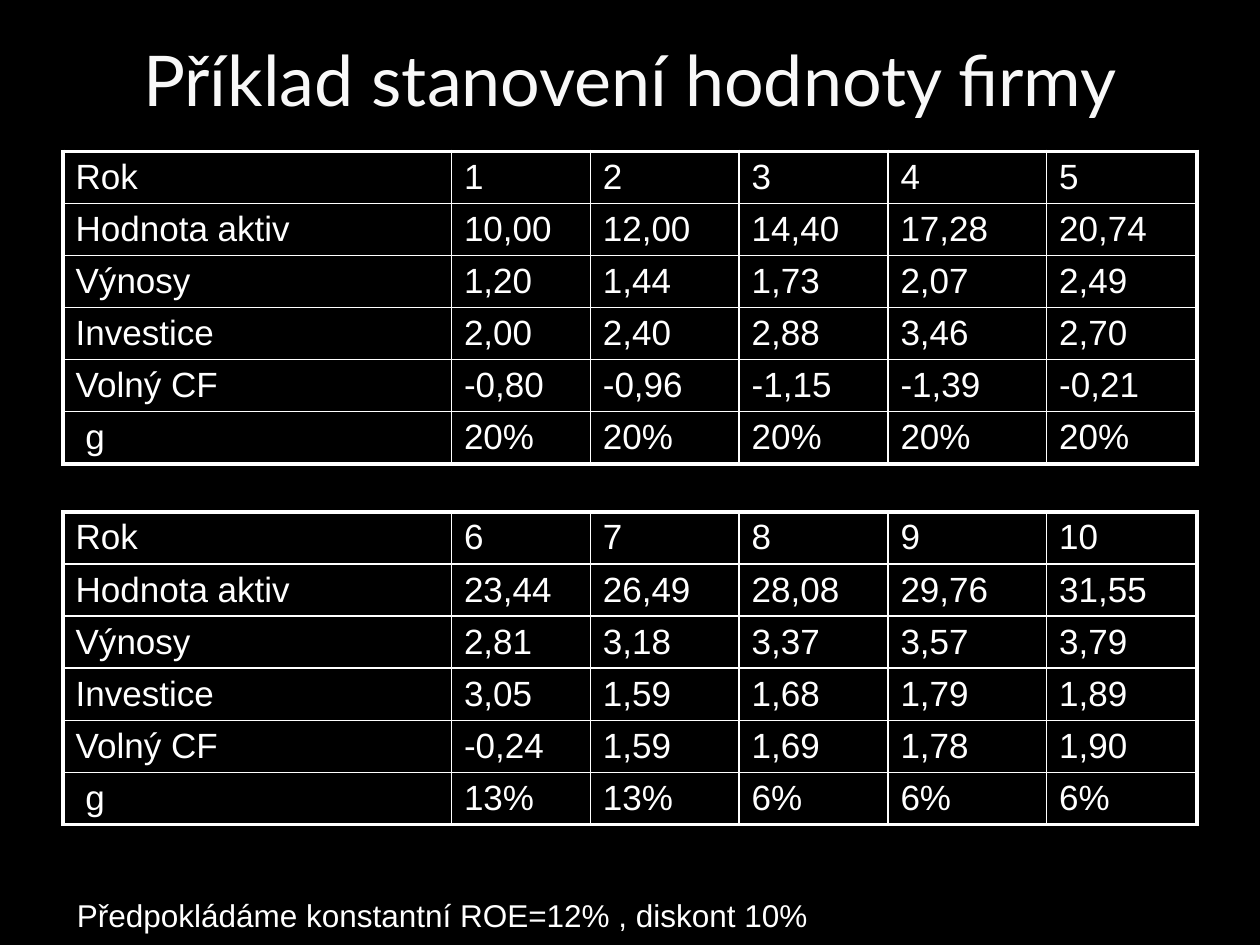
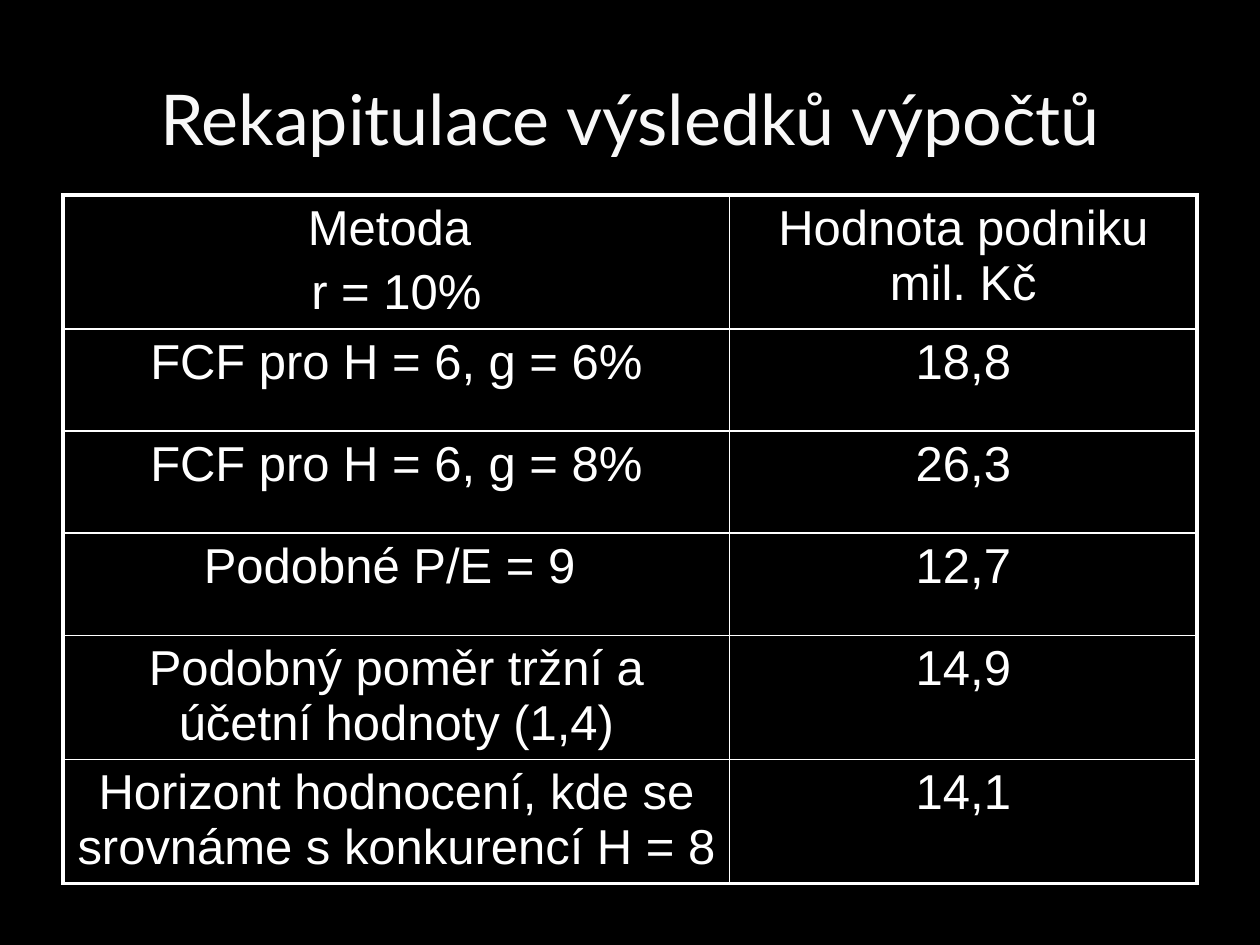
import pptx
import pptx.util
import pptx.dml.color
import pptx.enum.text
import pptx.oxml
import pptx.oxml.ns

Cm = pptx.util.Cm
Pt = pptx.util.Pt
RGB = pptx.dml.color.RGBColor.from_string
ALIGN = pptx.enum.text.PP_ALIGN
ANCHOR = pptx.enum.text.MSO_ANCHOR
NS = pptx.oxml.ns.nsdecls("a")

HUES = {"back": "000000", "title": "F8F8F8", "text": "FFFFFF"}
LEFT, WIDTH = 1.27, 22.86
THIN, THICK = 1, 2.25


def style(frame, size, align, font="Arial", hue="text", gap=20):
    for para in frame.paragraphs:
        para.alignment = align
        para._p.get_or_add_pPr().insert(0, pptx.oxml.parse_xml(
            f'<a:spcBef {NS}><a:spcPct val="{gap * 1000}"/></a:spcBef>'))
        for run in para.runs:
            run.font.size = Pt(size)
            run.font.name = font
            run.font.color.rgb = RGB(HUES[hue])


def grid(slide, top, cols, rows, data, size, align):
    frame = slide.shapes.add_table(
        len(rows), len(cols), Cm(LEFT), Cm(top), Cm(sum(cols)), Cm(sum(rows)))
    table = frame.table
    table.first_row = False
    table.horz_banding = False
    for col, width in zip(table.columns, cols):
        col.width = Cm(width)
    for row, height in zip(table.rows, rows):
        row.height = Cm(height)
    for r, line in enumerate(data):
        for c, text in enumerate(line):
            cell = table.cell(r, c)
            cell.margin_bottom = 0
            cell.text_frame.text = text
            style(cell.text_frame, size, align)
            props = cell._tc.get_or_add_tcPr()
            outer = {"L": c == 0, "R": c == len(cols) - 1,
                     "T": r == 0, "B": r == len(rows) - 1}
            for side, edge in outer.items():
                width = Pt(THICK if edge else THIN)
                props.append(pptx.oxml.parse_xml(
                    f'<a:ln{side} {NS} w="{width}"><a:solidFill>'
                    f'<a:srgbClr val="{HUES["text"]}"/></a:solidFill></a:ln{side}>'))
            cell.fill.background()


deck = pptx.Presentation()
deck.slide_width = Cm(25.4)
deck.slide_height = Cm(19.05)

heads = [("Příklad stanovení hodnoty firmy", 0),
         ("Rekapitulace výsledků výpočtů", 0.77)]
slides = []
for text, top in heads:
    slide = deck.slides.add_slide(deck.slide_layouts[6])
    slide.background.fill.solid()
    slide.background.fill.fore_color.rgb = RGB(HUES["back"])
    box = slide.shapes.add_textbox(Cm(LEFT), Cm(top), Cm(WIDTH), Cm(3.18))
    frame = box.text_frame
    frame.word_wrap = True
    frame.vertical_anchor = ANCHOR.MIDDLE
    frame.text = text
    style(frame, 40, ALIGN.CENTER, "Lato", "title", 0)
    slides.append(slide)
plan, recap = slides

names = ["Rok", "Hodnota aktiv", "Výnosy", "Investice", "Volný CF", " g"]
spans = [
    (3.05, ["1 2 3 4 5",
            "10,00 12,00 14,40 17,28 20,74",
            "1,20 1,44 1,73 2,07 2,49",
            "2,00 2,40 2,88 3,46 2,70",
            "-0,80 -0,96 -1,15 -1,39 -0,21",
            "20% 20% 20% 20% 20%"]),
    (10.32, ["6 7 8 9 10",
             "23,44 26,49 28,08 29,76 31,55",
             "2,81 3,18 3,37 3,57 3,79",
             "3,05 1,59 1,68 1,79 1,89",
             "-0,24 1,59 1,69 1,78 1,90",
             "13% 13% 6% 6% 6%"]),
]
for top, lines in spans:
    data = [[name] + line.split() for name, line in zip(names, lines)]
    grid(plan, top, [7.83, 2.8, 3, 3, 3.2, 3.03], [1.05] * 6, data, 20, ALIGN.LEFT)

note = plan.shapes.add_textbox(Cm(1.3), Cm(17.93), Cm(21.8), Cm(1.02))
note.text_frame.word_wrap = True
note.text_frame.text = "Předpokládáme konstantní ROE=12% , diskont 10%"
style(note.text_frame, 18, ALIGN.LEFT, gap=50)

sums = [
    ("Metoda \nr = 10%", "Hodnota podniku mil. Kč"),
    ("FCF pro H = 6, g = 6%", "18,8"),
    ("FCF pro H = 6, g = 8%", "26,3"),
    ("Podobné P/E = 9 ", "12,7"),
    ("Podobný poměr tržní a účetní hodnoty (1,4)", "14,9"),
    ("Horizont hodnocení, kde se srovnáme s konkurencí H = 8 ", "14,1"),
]
grid(recap, 3.93, [13.44, 9.42], [2.64] + [2.06] * 3 + [2.46] * 2,
     sums, 28, ALIGN.CENTER)

deck.save("out.pptx")
